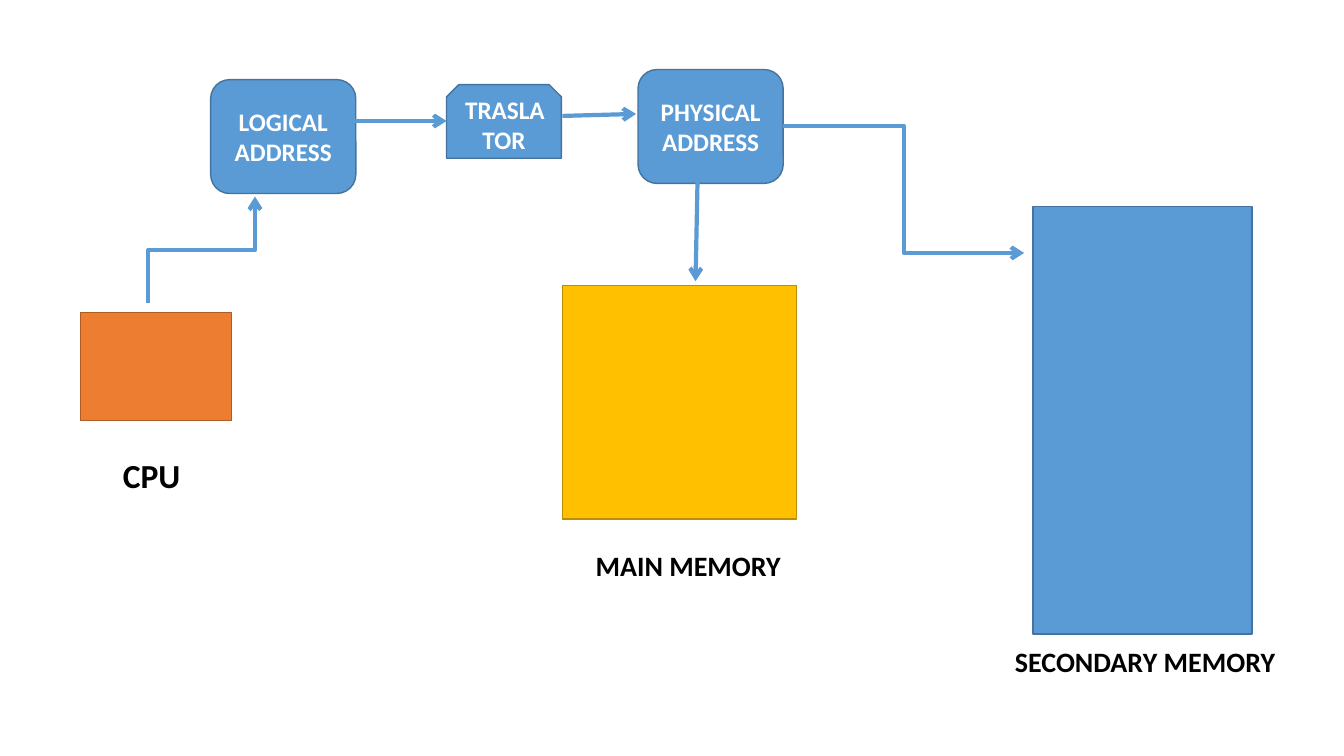
from dataclasses import dataclass

from pptx import Presentation
from pptx import util as u
from pptx.dml.color import RGBColor
from pptx.enum import shapes, text
from pptx.oxml import ns, xmlchemy

CELL = u.Inches(0.1)  # one column or row of the layout grid
COLUMNS, ROWS = 133.33, 75
COLOURS = {
    "blue": "5B9BD5", "blue edge": "43739E",
    "orange": "ED7D31", "orange edge": "AF5C24",
    "gold": "FFC000", "gold edge": "BD8E00",
    "black": "000000", "white": "FFFFFF",
}
Kind = shapes.MSO_SHAPE


@dataclass
class Block:
    column: float
    row: float
    columns: float
    rows: float
    colour: str = "blue"
    kind: Kind = Kind.RECTANGLE
    words: str = ""


@dataclass
class Label:
    column: float
    row: float
    columns: float
    rows: float
    words: str
    size: int = 20


@dataclass
class Arrow:
    start: tuple[float, float]
    end: tuple[float, float]
    bent: bool = False
    leaves_upward: bool = False


BLOCKS = [
    Block(8, 31, 15, 10.7, "orange"),
    Block(102.5, 20.5, 21.7, 42.4),
    Block(55.8, 28.3, 23.2, 23.2, "gold"),
    Block(20.9, 7.9, 14.4, 11.3, kind=Kind.ROUNDED_RECTANGLE, words="LOGICAL ADDRESS"),
    Block(63.3, 6.9, 14.4, 11.3, kind=Kind.ROUNDED_RECTANGLE, words="PHYSICAL ADDRESS"),
    Block(44.3, 8.4, 11.4, 7.3, kind=Kind.SNIP_2_SAME_RECTANGLE, words="TRASLATOR"),
]
LABELS = [
    Label(11.2, 44.6, 10.4, 5, "CPU", 24),
    Label(99.7, 63.4, 30.5, 4.4, "SECONDARY MEMORY"),
    Label(58.1, 53.9, 20.8, 4.4, "MAIN MEMORY"),
]
ARROWS = [
    Arrow((14.7, 30.1), (25.3, 19.5), bent=True, leaves_upward=True),
    Arrow((35.2, 12), (44.3, 12)),
    Arrow((55.8, 11.5), (63.1, 11.3)),
    Arrow((69.2, 18), (69, 27.9)),
    Arrow((77.7, 12.5), (101.6, 25.1), bent=True),
]


def grid(*cells: float) -> list[int]:
    return [round(cell * CELL) for cell in cells]


def colour(name: str) -> RGBColor:
    return RGBColor.from_string(COLOURS[name])


def write(shape, words: str, size: int, ink: str, align: text.PP_ALIGN) -> None:
    shape.text_frame.word_wrap = True
    paragraph = shape.text_frame.paragraphs[0]
    paragraph.alignment = align
    run = paragraph.add_run()
    run.text = words
    font_format = {"name": "Calibri", "size": u.Pt(size), "bold": True}
    for attribute, value in font_format.items():
        setattr(run.font, attribute, value)
    run.font.color.rgb = colour(ink)


def draw_block(slide, block: Block) -> None:
    place = grid(block.column, block.row, block.columns, block.rows)
    shape = slide.shapes.add_shape(block.kind, *place)
    shape.shadow.inherit = False
    shape.fill.solid()
    shape.fill.fore_color.rgb = colour(block.colour)
    shape.line.color.rgb = colour(f"{block.colour} edge")
    shape.line.width = u.Pt(1)
    if block.words:
        shape.text_frame.vertical_anchor = text.MSO_ANCHOR.MIDDLE
        write(shape, block.words, 18, "white", text.PP_ALIGN.CENTER)


def draw_label(slide, label: Label) -> None:
    place = grid(label.column, label.row, label.columns, label.rows)
    box = slide.shapes.add_textbox(*place)
    write(box, label.words, label.size, "black", text.PP_ALIGN.LEFT)
    box.text_frame.auto_size = text.MSO_AUTO_SIZE.SHAPE_TO_FIT_TEXT


def draw_arrow(slide, arrow: Arrow) -> None:
    """Draw an arrow; one leaving upward is a square elbow turned by 270 degrees."""
    (x1, y1), (x2, y2) = arrow.start, arrow.end
    if arrow.leaves_upward:
        y1, y2 = y2, y1
    kind = shapes.MSO_CONNECTOR.ELBOW if arrow.bent else shapes.MSO_CONNECTOR.STRAIGHT
    connector = slide.shapes.add_connector(kind, *grid(x1, y1, x2, y2))
    connector.line.color.rgb = colour("blue")
    connector.line.width = u.Pt(3)
    properties = connector._element.spPr
    if arrow.leaves_upward:
        properties.find(ns.qn("a:xfrm")).set("rot", str(270 * 60000))
    head = xmlchemy.OxmlElement("a:tailEnd")
    head.set("type", "arrow")
    properties.find(ns.qn("a:ln")).append(head)
    properties.append(xmlchemy.OxmlElement("a:effectLst"))


def main() -> None:
    presentation = Presentation()
    presentation.slide_width, presentation.slide_height = grid(COLUMNS, ROWS)
    slide = presentation.slides.add_slide(presentation.slide_layouts[6])
    for block in BLOCKS:
        draw_block(slide, block)
    for label in LABELS:
        draw_label(slide, label)
    for arrow in ARROWS:
        draw_arrow(slide, arrow)
    presentation.save("out.pptx")


if __name__ == "__main__":
    main()
